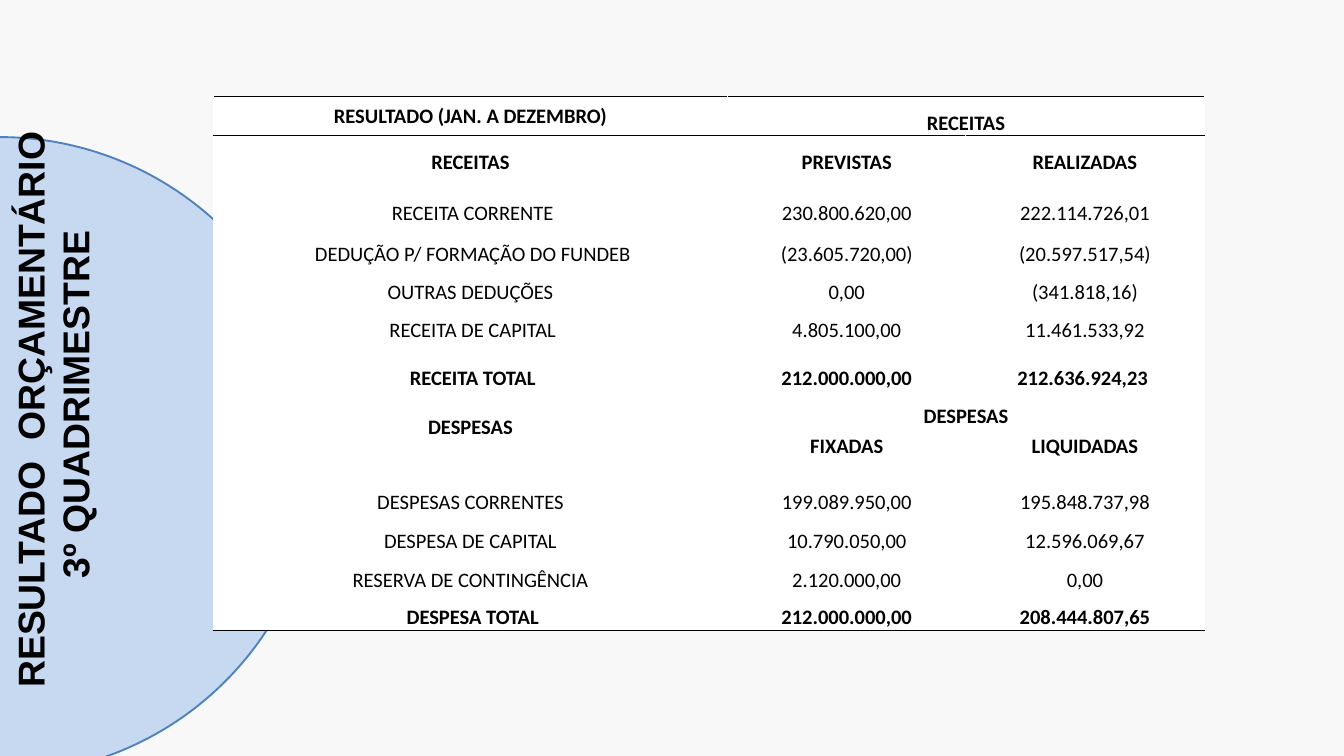
from lxml import etree
from pptx import Presentation
from pptx.dml.color import RGBColor
from pptx.enum.shapes import MSO_SHAPE
from pptx.enum.text import MSO_ANCHOR, PP_ALIGN
from pptx.oxml import parse_xml
from pptx.oxml.ns import nsdecls, qn
from pptx.util import Pt

PX = 9144
OVAL = MSO_SHAPE.OVAL
MIDDLE, BOTTOM = MSO_ANCHOR.MIDDLE, MSO_ANCHOR.BOTTOM
CENTER = PP_ALIGN.CENTER

BACKGROUND = RGBColor(0xF8, 0xF8, 0xF8)
PALE_BLUE = RGBColor(0xC6, 0xD9, 0xF1)
BLUE = RGBColor(0x4F, 0x81, 0xBD)
BLACK = RGBColor(0, 0, 0)
WHITE = RGBColor(0xFF, 0xFF, 0xFF)

COLUMNS = (766, 354, 355)
# height, bold, number of leading cells anchored in the middle, texts
ROWS = (
    (59, True, 1, ("RESULTADO (JAN. A DEZEMBRO)", "RECEITAS", "")),
    (78, True, 3, ("RECEITAS", "PREVISTAS", "REALIZADAS")),
    (56, False, 0, (" RECEITA CORRENTE", "230.800.620,00", " 222.114.726,01 ")),
    (62, False, 0, (" DEDUÇÃO P/ FORMAÇÃO DO FUNDEB", "(23.605.720,00)", "(20.597.517,54)")),
    (56, False, 0, ("OUTRAS DEDUÇÕES", "0,00", "(341.818,16)")),
    (56, False, 0, (" RECEITA DE CAPITAL", "4.805.100,00", "11.461.533,92")),
    (72, True, 0, (" RECEITA TOTAL", "212.000.000,00", "212.636.924,23 ")),
    (56, True, 1, ("DESPESAS", "DESPESAS", "")),
    (53, True, 3, ("", "FIXADAS", "LIQUIDADAS")),
    (75, False, 0, ("DESPESAS CORRENTES", "199.089.950,00", "195.848.737,98")),
    (58, False, 0, ("DESPESA DE CAPITAL", "10.790.050,00", "12.596.069,67")),
    (58, False, 0, ("RESERVA DE CONTINGÊNCIA", "2.120.000,00", "0,00")),
    (56, True, 0, (" DESPESA TOTAL", "212.000.000,00", "208.444.807,65")),
)
MERGES = (((0, 1), (0, 2)), ((7, 0), (8, 0)), ((7, 1), (7, 2)))
RULES = {0: ("lnT", "lnB"), 1: ("lnT",), len(ROWS) - 1: ("lnB",)}


class Deck:
    def __init__(self, width, height):
        self.prs = Presentation()
        self.prs.slide_width, self.prs.slide_height = width * PX, height * PX
        self.s = self.prs.slides.add_slide(self.prs.slide_layouts[6])
        fill = self.s.background.fill
        fill.solid()
        fill.fore_color.rgb = BACKGROUND

    def box(self, *lengths):
        return [n * PX for n in lengths]

    def run(self, p, text, size, font, bold):
        r = p.add_run()
        r.text = text
        r.font.size, r.font.name, r.font.bold = Pt(size), font, bold
        r.font.color.rgb = BLACK
        return r

    def circle(self, x, y, size):
        sp = self.s.shapes.add_shape(OVAL, *self.box(x, y, size, size))
        sp.shadow.inherit = False
        sp.fill.solid()
        sp.fill.fore_color.rgb = PALE_BLUE
        sp.line.color.rgb = BLUE
        sp.line.width = Pt(2)

    def vertical_title(self, x, y, w, h, lines):
        tf = self.s.shapes.add_textbox(*self.box(x, y, w, h)).text_frame
        tf.word_wrap = True
        tf._txBody.find(qn("a:bodyPr")).set("vert", "vert270")
        p = tf.paragraphs[0]
        p.alignment = CENTER
        for i, line in enumerate(lines):
            if i:
                p.add_line_break()
            r = self.run(p, line, 40, "Arial", True)
            r._r.get_or_add_rPr().insert(0, self.outline("ln", 0.75, WHITE))

    def outline(self, tag, width, color):
        return parse_xml(
            f'<a:{tag} {nsdecls("a")} w="{Pt(width)}"><a:solidFill>'
            f'<a:srgbClr val="{color}"/></a:solidFill></a:{tag}>')

    def cell(self, cell, text, bold, anchor, rules):
        cell.margin_left = cell.margin_right = cell.margin_top = PX
        cell.margin_bottom = 0
        cell.vertical_anchor = anchor
        for tag in rules:
            cell._tc.get_or_add_tcPr().append(self.outline(tag, 1, BLACK))
        cell.fill.solid()
        cell.fill.fore_color.rgb = WHITE
        if text:
            p = cell.text_frame.paragraphs[0]
            p.alignment = CENTER
            self.run(p, text, 22, "Calibri", bold)

    def table(self, x, y):
        height = sum(row[0] for row in ROWS)
        frame = self.s.shapes.add_table(
            len(ROWS), len(COLUMNS), *self.box(x, y, sum(COLUMNS), height))
        table = frame.table
        table.first_row = table.horz_banding = False
        for column, width in zip(table.columns, COLUMNS):
            column.width = width * PX
        for i, (height, bold, middle, texts) in enumerate(ROWS):
            table.rows[i].height = height * PX
            for j, text in enumerate(texts):
                anchor = MIDDLE if j < middle else BOTTOM
                self.cell(table.cell(i, j), text, bold, anchor, RULES.get(i, ()))
        for first, last in MERGES:
            table.cell(*first).merge(table.cell(*last))


def main():
    deck = Deck(2000, 1125)
    deck.circle(-475, 204, 949)
    deck.vertical_title(6, 151, 155, 902, ("RESULTADO  ORÇAMENTÁRIO ", "3º QUADRIMESTRE"))
    deck.table(317, 143)
    deck.prs.save("out.pptx")


if __name__ == "__main__":
    main()
